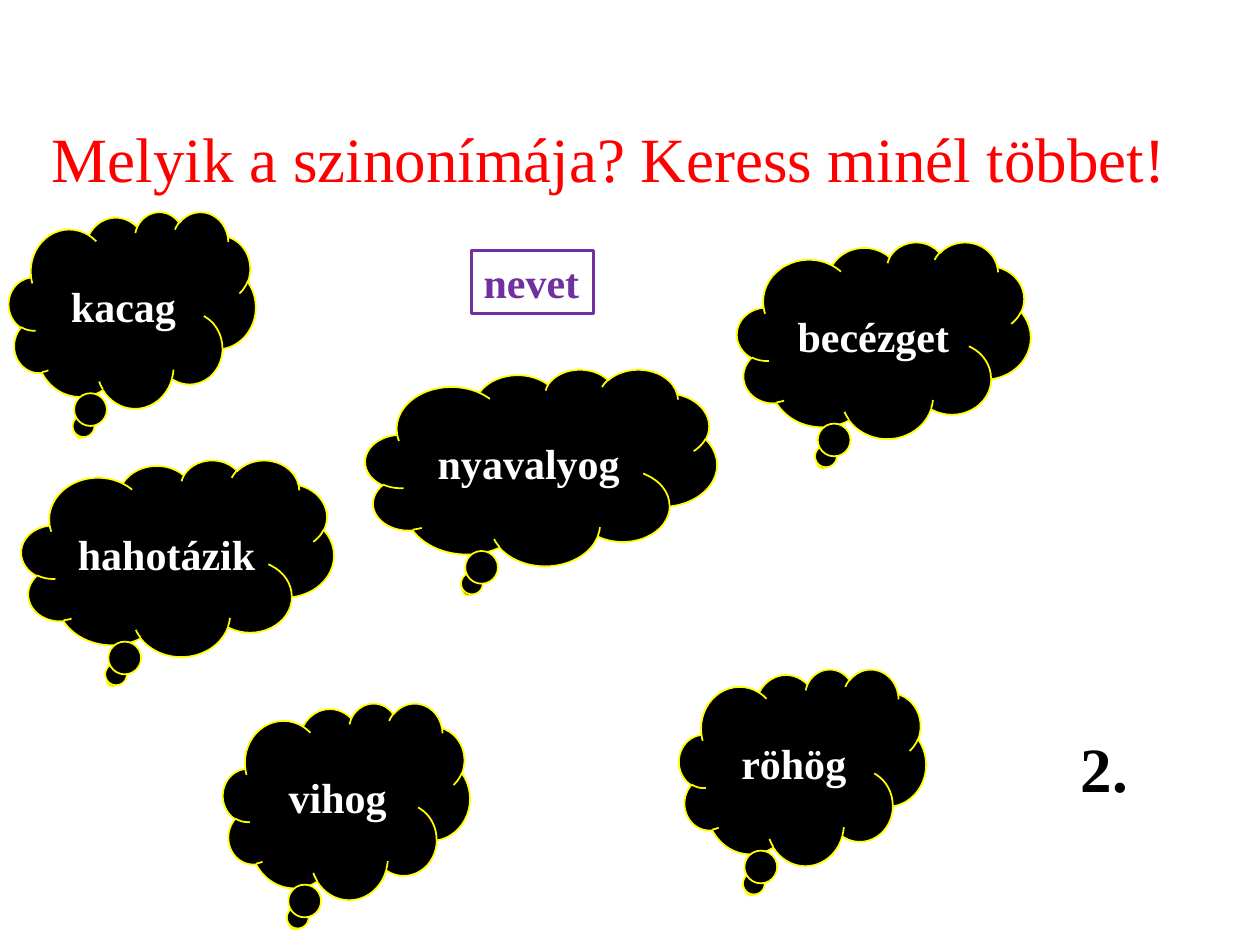
from dataclasses import dataclass

from pptx import Presentation
from pptx.dml.color import RGBColor as Rgb
from pptx.enum.shapes import MSO_SHAPE as Shape
from pptx.enum.text import MSO_ANCHOR as Anchor, MSO_AUTO_SIZE as Fit, PP_ALIGN as Align
from pptx.util import Inches, Pt


@dataclass(frozen=True)
class Theme:
    font: str = "Times New Roman"
    black: Rgb = Rgb(0, 0, 0)
    white: Rgb = Rgb(255, 255, 255)
    red: Rgb = Rgb(255, 0, 0)
    yellow: Rgb = Rgb(255, 255, 0)
    purple: Rgb = Rgb(0x70, 0x30, 0xA0)
    large: Pt = Pt(36)
    small: Pt = Pt(24)


THEME = Theme()
CLOUD_HEIGHT = 1.56
CLOUDS = [  # word, left, top, width
    ("vihog", 1.77, 5.58, 1.96),
    ("becézget", 5.85, 1.92, 2.33),
    ("nyavalyog", 2.9, 2.93, 2.79),
    ("kacag", 0.07, 1.68, 1.96),
    ("hahotázik", 0.17, 3.65, 2.48),
    ("röhög", 5.39, 5.31, 1.96),
]


def write(frame, text, size, color, bold=True, align=Align.LEFT, anchor=Anchor.TOP):
    frame.vertical_anchor = anchor
    par = frame.paragraphs[0]
    par.alignment = align
    run = par.add_run()
    run.text = text
    font = run.font
    font.name, font.size, font.bold = THEME.font, size, bold
    font.color.rgb = color


def hug(frame):
    """Let the box fit its single line of text."""
    frame.word_wrap = False
    frame.auto_size = Fit.SHAPE_TO_FIT_TEXT


def set_title(slide, text):
    title = slide.shapes.title
    title.left, title.top = Inches(0.17), Inches(0.49)
    title.width, title.height = Inches(9.33), Inches(1.51)
    write(title.text_frame, text, THEME.large, THEME.red, False,
          Align.CENTER, Anchor.MIDDLE)


def add_number(slide, text):
    box = slide.shapes.add_textbox(Inches(8.48), Inches(5.74), Inches(0.58), Inches(0.71))
    hug(box.text_frame)
    write(box.text_frame, text, THEME.large, THEME.black)


def add_outlined(slide, kind, left, top, width, height, color, weight):
    shape = slide.shapes.add_shape(
        kind, Inches(left), Inches(top), Inches(width), Inches(height))
    shape.shadow.inherit = False
    shape.line.color.rgb = color
    shape.line.width = Pt(weight)
    return shape


def add_key(slide, word):
    box = add_outlined(slide, Shape.RECTANGLE, 3.74, 1.99, 0.97, 0.5, THEME.purple, 1.5)
    box.fill.background()
    hug(box.text_frame)
    write(box.text_frame, word, THEME.small, THEME.purple)


def add_cloud(slide, word, left, top, width):
    cloud = add_outlined(slide, Shape.CLOUD_CALLOUT, left, top, width, CLOUD_HEIGHT,
                         THEME.yellow, 1)
    cloud.fill.solid()
    cloud.fill.fore_color.rgb = THEME.black
    write(cloud.text_frame, word, THEME.small, THEME.white,
          align=Align.CENTER, anchor=Anchor.MIDDLE)


def main():
    deck = Presentation()
    deck.slide_width, deck.slide_height = Inches(10), Inches(7.5)
    slide = deck.slides.add_slide(deck.slide_layouts[5])
    add_number(slide, "2.")
    set_title(slide, "Melyik a szinonímája? Keress minél többet!")
    add_key(slide, "nevet")
    for cloud in CLOUDS:
        add_cloud(slide, *cloud)
    deck.save("out.pptx")


if __name__ == "__main__":
    main()
